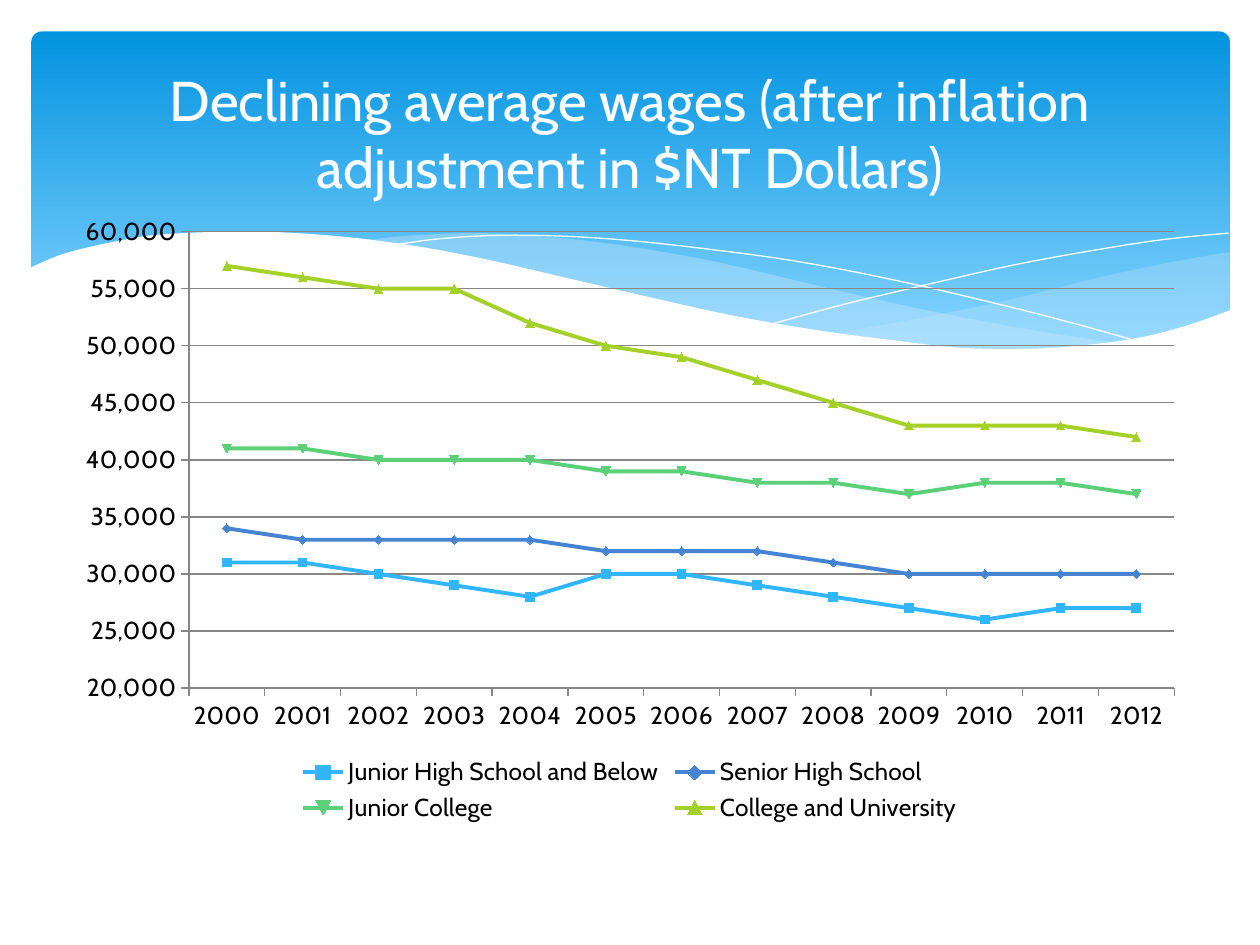
from pptx import Presentation, util as u
from pptx.chart.data import CategoryChartData
from pptx.dml.color import RGBColor
from pptx.enum import chart as ch, shapes as sh, text as tx
from pptx.oxml.ns import qn
from lxml import etree

PX = 9144  # 100 px to the inch
THEME = {
    "font": "Cabin", "title": 32, "label": 14,
    "white": "FFFFFF", "text": "000000", "axis": "878787", "veil": "C6E7FC",
    "top": "0293E0", "low": "83D3FE",
}

# Content
TITLE = "Declining average wages (after inflation adjustment in $NT Dollars)"
YEARS = [str(y) for y in range(2000, 2013)]
# name, colour, wages in thousands of dollars
WAGES = [
    ("Junior High School and Below", "31B6FD",
     [31, 31, 30, 29, 28, 30, 30, 29, 28, 27, 26, 27, 27]),
    ("Senior High School", "4584D3",
     [34, 33, 33, 33, 33, 32, 32, 32, 31, 30, 30, 30, 30]),
    ("Junior College", "5BD078",
     [41, 41, 40, 40, 40, 39, 39, 38, 38, 37, 38, 38, 37]),
    ("College and University", "A5D028",
     [57, 56, 55, 55, 52, 50, 49, 47, 45, 43, 43, 43, 42]),
]

# Wave outlines: each shape is a list of smooth runs joined end to end
RIGHT = [
    [(975, 200), (935, 207), (891, 216), (861, 223), (805, 237), (753, 248),
     (706, 257), (661, 265)],
    [(661, 265), (705, 271), (745, 275), (781, 277), (814, 278), (854, 276),
     (889, 272), (921, 265), (949, 257), (976, 247)],
    [(976, 247), (976, 200)],
]
MIDDLE = [
    [(893, 273), (837, 265), (775, 254), (706, 240), (629, 222), (569, 208),
     (514, 198), (465, 191), (420, 187), (380, 185), (344, 186), (313, 188),
     (286, 191)],
    [(286, 191), (342, 199), (404, 211), (449, 222), (530, 240), (601, 255),
     (665, 266), (722, 274), (773, 277), (818, 278), (857, 277), (893, 273)],
]
ARCH = [[(309, 195), (344, 190), (387, 187), (433, 187), (489, 190), (556, 197),
         (636, 208), (727, 226), (831, 251), (907, 272)]]
RISE = [[(613, 257), (672, 241), (748, 223), (806, 210), (866, 199), (924, 190),
         (975, 185)]]
PAPER = [
    [(977, 246), (940, 259), (899, 269), (850, 275), (809, 277), (761, 276),
     (708, 270), (648, 262), (579, 250), (503, 233), (447, 220), (391, 207),
     (340, 197), (292, 190), (250, 186), (211, 184), (177, 184), (146, 185),
     (119, 187), (95, 191), (67, 197), (46, 203), (23, 213)],
    [(23, 213), (23, 329), (977, 329), (977, 246)],
]


def rgb(key):
    return RGBColor.from_string(THEME.get(key, key))


def smooth(run, steps=4):
    """Catmull-Rom points through a run; short runs of corners stay straight."""
    if len(run) < 5:
        return run
    ends = [run[0], *run, run[-1]]
    out = [run[0]]
    for a, b, c, d in zip(ends, ends[1:], ends[2:], ends[3:]):
        for i in range(1, steps + 1):
            t = i / steps
            out.append(tuple(
                (2 * q + (r - p) * t + (2 * p - 5 * q + 4 * r - s) * t ** 2
                 + (3 * q - p - 3 * r + s) * t ** 3) / 2
                for p, q, r, s in zip(a, b, c, d)))
    return out


def wave(tree, runs, fill=None, alpha=100):
    # EMU points keep the curve free of whole-px steps
    pts = [(round(x * PX), round(y * PX)) for run in runs for x, y in smooth(run)]
    pen = tree.build_freeform(*pts[0])
    pen.add_line_segments(pts[1:], close=fill is not None)
    shape = pen.convert_to_shape()
    shape.shadow.inherit = False
    if fill is None:
        shape.fill.background()
        shape.line.color.rgb = rgb("white")
        shape.line.width = u.Pt(0)
        return
    shape.line.fill.background()
    shape.fill.solid()
    shape.fill.fore_color.rgb = rgb(fill)
    if alpha < 100:
        tone = shape.element.spPr.find(qn("a:solidFill"))[0]
        etree.SubElement(tone, qn("a:alpha"), val=str(alpha * 1000))


def banner(tree):
    box = tree.add_shape(sh.MSO_SHAPE.ROUNDED_RECTANGLE,
                         *(n * PX for n in (25, 25, 951, 270)))
    box.adjustments[0] = 0.03
    box.shadow.inherit = False
    box.line.fill.background()
    box.fill.gradient()
    box.fill.gradient_angle = 270
    for stop, key, at in zip(box.fill.gradient_stops, ("top", "low"), (0, 0.9)):
        stop.color.rgb = rgb(key)
        stop.position = at


def title(tree):
    box = tree.add_textbox(*(n * PX for n in (50, 37, 900, 137)))
    frame = box.text_frame
    frame.word_wrap = True
    frame.vertical_anchor = tx.MSO_ANCHOR.MIDDLE
    para = frame.paragraphs[0]
    para.alignment = tx.PP_ALIGN.CENTER
    run = para.add_run()
    run.text = TITLE
    run.font.name = THEME["font"]
    run.font.size = u.Pt(THEME["title"])
    run.font.color.rgb = rgb("white")


def wages(tree):
    data = CategoryChartData(number_format="#,##0")
    data.categories = YEARS
    for name, _, vals in WAGES:
        data.add_series(name, [v * 1000 for v in vals])
    chart = tree.add_chart(ch.XL_CHART_TYPE.LINE_MARKERS,
                           *(n * PX for n in (50, 162, 900, 495)), data).chart
    chart.has_title = False
    chart.font.name = THEME["font"]
    chart.font.size = u.Pt(THEME["label"])
    chart.font.color.rgb = rgb("text")
    chart.has_legend = True
    chart.legend.position = ch.XL_LEGEND_POSITION.BOTTOM
    chart.legend.include_in_layout = False

    # Axes
    scale = chart.value_axis
    scale.minimum_scale, scale.maximum_scale = 20000, 60000
    scale.major_unit = 5000
    scale.has_major_gridlines = True
    scale.tick_labels.number_format = "#,##0"
    scale.tick_labels.number_format_is_linked = False
    for axis in (chart.category_axis, scale):
        axis.major_tick_mark = ch.XL_TICK_MARK.OUTSIDE
        axis.format.line.color.rgb = rgb("axis")
    scale.major_gridlines.format.line.color.rgb = rgb("axis")

    # Series
    plot = chart.plots[0]
    plot.vary_by_categories = False
    for line, (_, tone, _) in zip(plot.series, WAGES):
        line.smooth = False
        line.format.line.color.rgb = rgb(tone)
        line.format.line.width = u.Pt(2.25)


def main():
    deck = Presentation()
    deck.slide_width, deck.slide_height = 1000 * PX, 750 * PX
    tree = deck.slides.add_slide(deck.slide_layouts[6]).shapes
    banner(tree)
    wave(tree, RIGHT, "veil", 29)
    wave(tree, MIDDLE, "veil", 40)
    wave(tree, ARCH)
    wave(tree, RISE)
    wave(tree, PAPER, "white")
    title(tree)
    wages(tree)
    deck.save("out.pptx")


if __name__ == "__main__":
    main()
